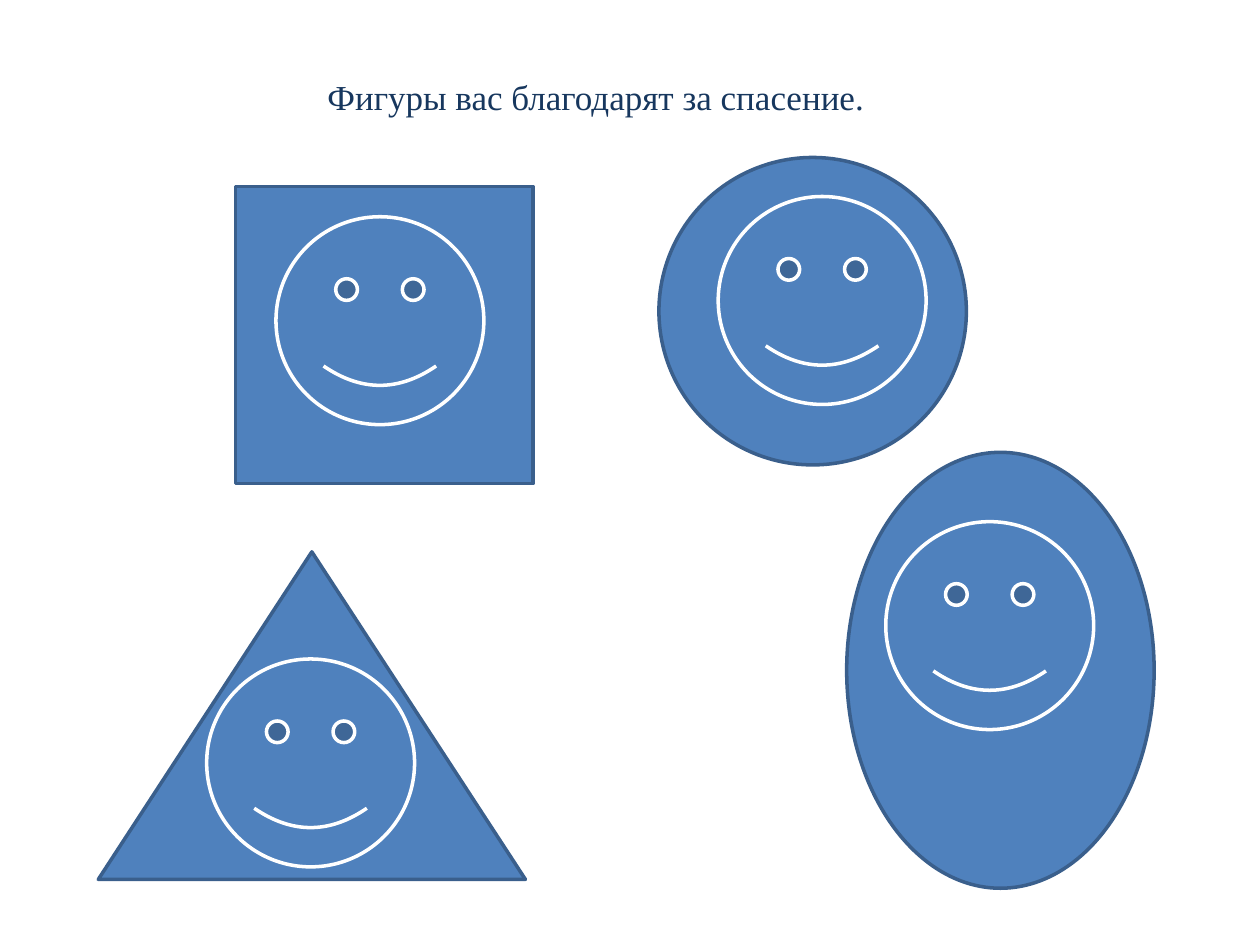
from pptx import Presentation
from pptx.dml.color import RGBColor
from pptx.enum.shapes import MSO_SHAPE
from pptx.enum.text import MSO_AUTO_SIZE
from pptx.util import Inches, Pt

SQUARE = MSO_SHAPE.RECTANGLE
OVAL = MSO_SHAPE.OVAL
TRIANGLE = MSO_SHAPE.ISOSCELES_TRIANGLE
SMILEY = MSO_SHAPE.SMILEY_FACE
GROW = MSO_AUTO_SIZE.SHAPE_TO_FIT_TEXT

COLORS = {"body": "4F81BD", "outline": "3A5F8C", "face": "FFFFFF", "title": "17375E"}
FACE_SIZE = 1.65

deck = Presentation()
deck.slide_width = Inches(10)
deck.slide_height = Inches(7.5)
page = deck.slides.add_slide(deck.slide_layouts[6])


def add_figure(kind, left, top, width, height, line):
    shape = page.shapes.add_shape(
        kind, Inches(left), Inches(top), Inches(width), Inches(height))
    shape.shadow.inherit = False
    shape.fill.solid()
    shape.fill.fore_color.rgb = RGBColor.from_string(COLORS["body"])
    shape.line.color.rgb = RGBColor.from_string(COLORS[line])
    shape.line.width = Pt(2)


def add_text(text, *, left, top, width, height, size, font, color):
    box = page.shapes.add_textbox(
        Inches(left), Inches(top), Inches(width), Inches(height))
    box.text_frame.word_wrap = False
    box.text_frame.auto_size = GROW
    span = box.text_frame.paragraphs[0].add_run()
    span.text = text
    span.font.size = Pt(size)
    span.font.name = font
    span.font.color.rgb = RGBColor.from_string(COLORS[color])


# Geometric figures: kind, left, top, width, height
figures = [
    (SQUARE, 1.87, 1.48, 2.36, 2.36),
    (OVAL, 5.23, 1.25, 2.44, 2.44),
    (TRIANGLE, 0.78, 4.38, 3.39, 2.6),
    (OVAL, 6.72, 3.59, 2.44, 3.46),
]
for kind, left, top, width, height in figures:
    add_figure(kind, left, top, width, height, "outline")

# Smiling faces, one on each figure
for left, top in [(2.19, 1.72), (5.7, 1.56), (1.64, 5.23), (7.03, 4.14)]:
    add_figure(SMILEY, left, top, FACE_SIZE, FACE_SIZE, "face")

# Title
add_text("Фигуры вас благодарят за спасение.", left=2.5, top=0.55, width=4.5,
         height=0.44, size=20, font="Times New Roman", color="title")

deck.save("out.pptx")
